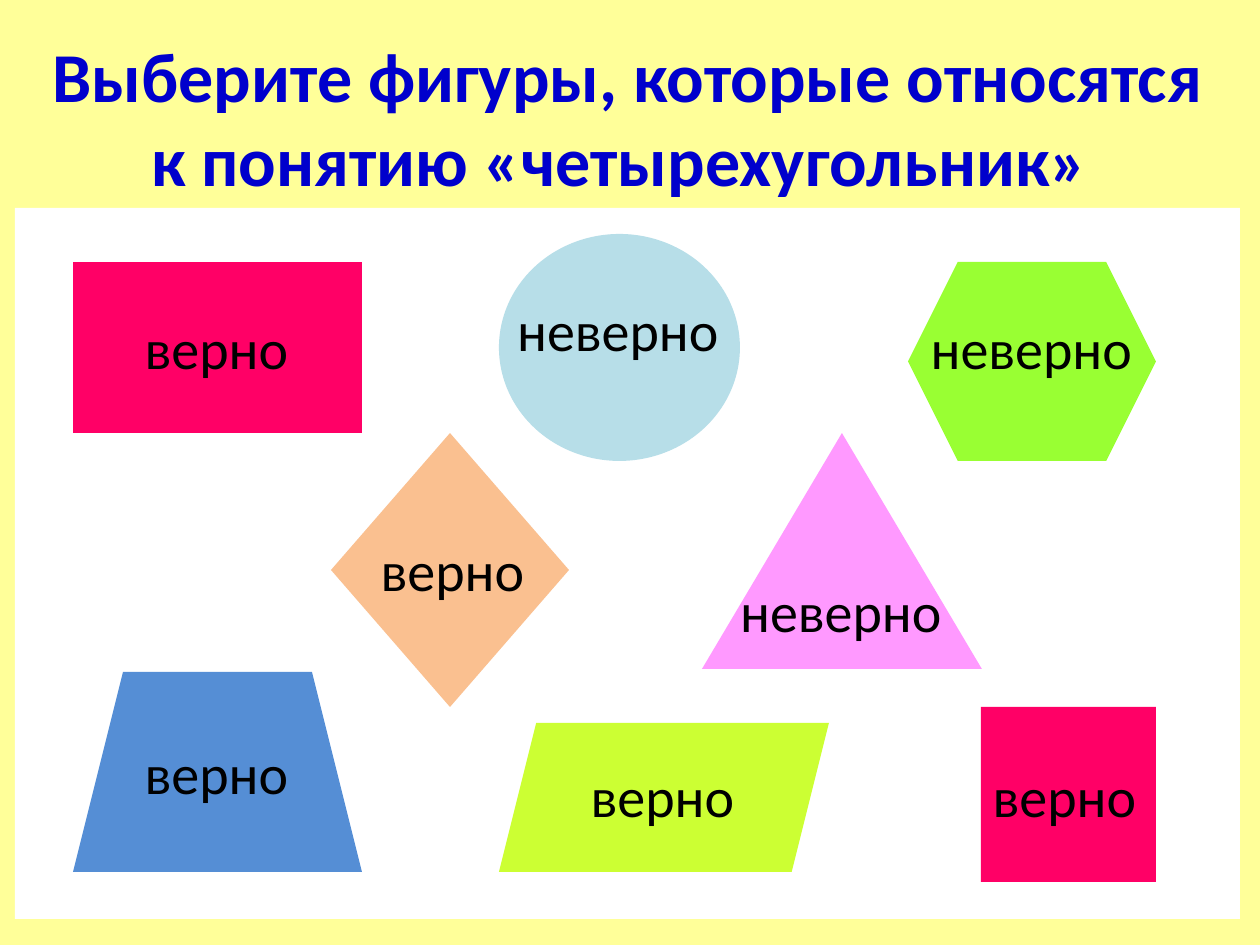
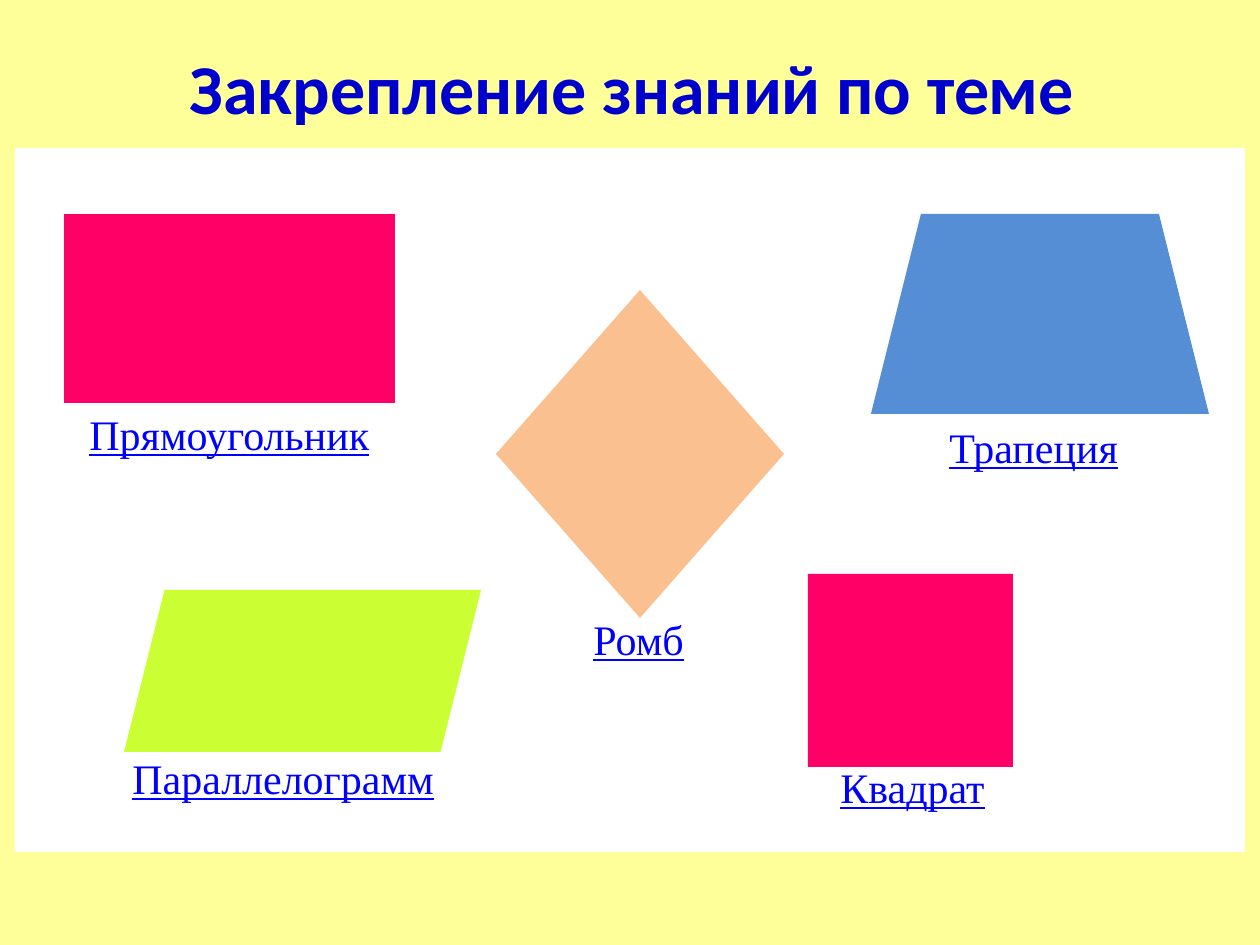
from pptx import Presentation
from pptx.dml.color import RGBColor
from pptx.enum.shapes import MSO_SHAPE
from pptx.enum.text import MSO_ANCHOR, MSO_AUTO_SIZE, PP_ALIGN
from pptx.util import Emu, Inches, Pt

PIXELS_PER_INCH = 126
PAGE_YELLOW = "FFFF99"
WHITE = "FFFFFF"
TITLE_BLUE = "0000CC"
LINK_BLUE = "0000FF"
BLACK = "000000"
RASPBERRY = "FF0066"
LIME = "CCFF33"
GREEN = "99FF33"
SKY = "B7DEE8"
BLUE = "558ED5"
PINK = "FF99FF"
PEACH = "FAC090"

ANSWER_FIGURES = [
    (MSO_SHAPE.FLOWCHART_PROCESS, RASPBERRY, (73, 262, 289, 171)),
    (MSO_SHAPE.PARALLELOGRAM, LIME, (499, 723, 330, 149)),
    (MSO_SHAPE.OVAL, SKY, (499, 234, 241, 227)),
    (MSO_SHAPE.TRAPEZOID, BLUE, (73, 672, 289, 200)),
    (MSO_SHAPE.ISOSCELES_TRIANGLE, PINK, (702, 433, 280, 236)),
    (MSO_SHAPE.RECTANGLE, RASPBERRY, (981, 707, 175, 175)),
    (MSO_SHAPE.HEXAGON, GREEN, (908, 262, 248, 199)),
    (MSO_SHAPE.DIAMOND, PEACH, (331, 433, 238, 274)),
]
ANSWERS = [
    ("верно", (126, 307, 181, 81)),
    ("верно", (362, 529, 181, 81)),
    ("верно", (126, 732, 181, 81)),
    ("верно", (974, 755, 181, 81)),
    ("верно", (572, 755, 181, 81)),
    ("неверно", (461, 289, 314, 81)),
    ("неверно", (901, 307, 261, 81)),
    ("неверно", (684, 570, 314, 81)),
]

NAMED_FIGURES = [
    (MSO_SHAPE.FLOWCHART_PROCESS, RASPBERRY, (64, 214, 331, 189)),
    (MSO_SHAPE.DIAMOND, PEACH, (496, 290, 288, 328)),
    (MSO_SHAPE.TRAPEZOID, BLUE, (871, 214, 338, 200)),
    (MSO_SHAPE.PARALLELOGRAM, LIME, (124, 590, 357, 162)),
    (MSO_SHAPE.RECTANGLE, RASPBERRY, (808, 574, 205, 193)),
]
FIGURE_NAMES = [
    ("Прямоугольник", (77, 402, 320, 63)),
    ("Ромб", (581, 607, 169, 63)),
    ("Параллелограмм", (120, 746, 338, 63)),
    ("Трапеция", (937, 415, 228, 63)),
    ("Квадрат", (828, 755, 246, 63)),
]


def px(length):
    """Turn pixels into EMU."""
    return Emu(round(length * Inches(1) / PIXELS_PER_INCH))


def paint(fill, color):
    """Give a fill one solid colour."""
    fill.solid()
    fill.fore_color.rgb = RGBColor.from_string(color)


def write_text(frame, text, font="Calibri", size=32, color=BLACK, bold=False,
               underline=False, align=PP_ALIGN.CENTER):
    """Fill a text frame with one formatted paragraph."""
    frame.word_wrap = True
    frame.auto_size = MSO_AUTO_SIZE.NONE
    frame.vertical_anchor = MSO_ANCHOR.TOP
    para = frame.paragraphs[0]
    para.alignment = align
    span = para.add_run()
    span.text = text
    span.font.name = font
    span.font.size = Pt(size)
    span.font.bold = bold
    span.font.underline = underline
    span.font.color.rgb = RGBColor.from_string(color)


def add_figure(page, kind, color, place):
    """Draw a flat figure without an outline."""
    figure = page.shapes.add_shape(kind, *map(px, place))
    figure.shadow.inherit = False
    paint(figure.fill, color)
    figure.line.fill.background()


def add_label(page, text, place, **style):
    """Put a text box on the page."""
    box = page.shapes.add_textbox(*map(px, place))
    write_text(box.text_frame, text, **style)


def add_page(deck, title, title_place, panel_place):
    """Add a titled page with a white panel."""
    page = deck.slides.add_slide(deck.slide_layouts.get_by_name("Title Only"))
    heading = page.shapes.title
    heading.left, heading.top, heading.width, heading.height = map(px, title_place)
    write_text(heading.text_frame, title, size=40, color=TITLE_BLUE, bold=True)
    add_figure(page, MSO_SHAPE.RECTANGLE, WHITE, panel_place)
    return page


def add_figures(page, figures, labels, **style):
    """Draw all figures and then their labels."""
    for kind, color, place in figures:
        add_figure(page, kind, color, place)
    for text, place in labels:
        add_label(page, text, place, **style)


def main():
    """Build and save the deck."""
    deck = Presentation()
    deck.slide_width, deck.slide_height = px(1260), px(945)
    paint(deck.slide_master.background.fill, PAGE_YELLOW)

    choice = add_page(
        deck, "Выберите фигуры, которые относятся к понятию «четырехугольник» ",
        (15, 26, 1225, 183), (15, 208, 1225, 711))
    add_figures(choice, ANSWER_FIGURES, ANSWERS)

    review = add_page(deck, "Закрепление знаний по теме ",
                      (144, 38, 992, 97), (15, 148, 1230, 704))
    add_figures(review, NAMED_FIGURES, FIGURE_NAMES, font="Times New Roman",
                size=24, color=LINK_BLUE, underline=True, align=PP_ALIGN.LEFT)

    deck.save("out.pptx")


if __name__ == "__main__":
    main()
